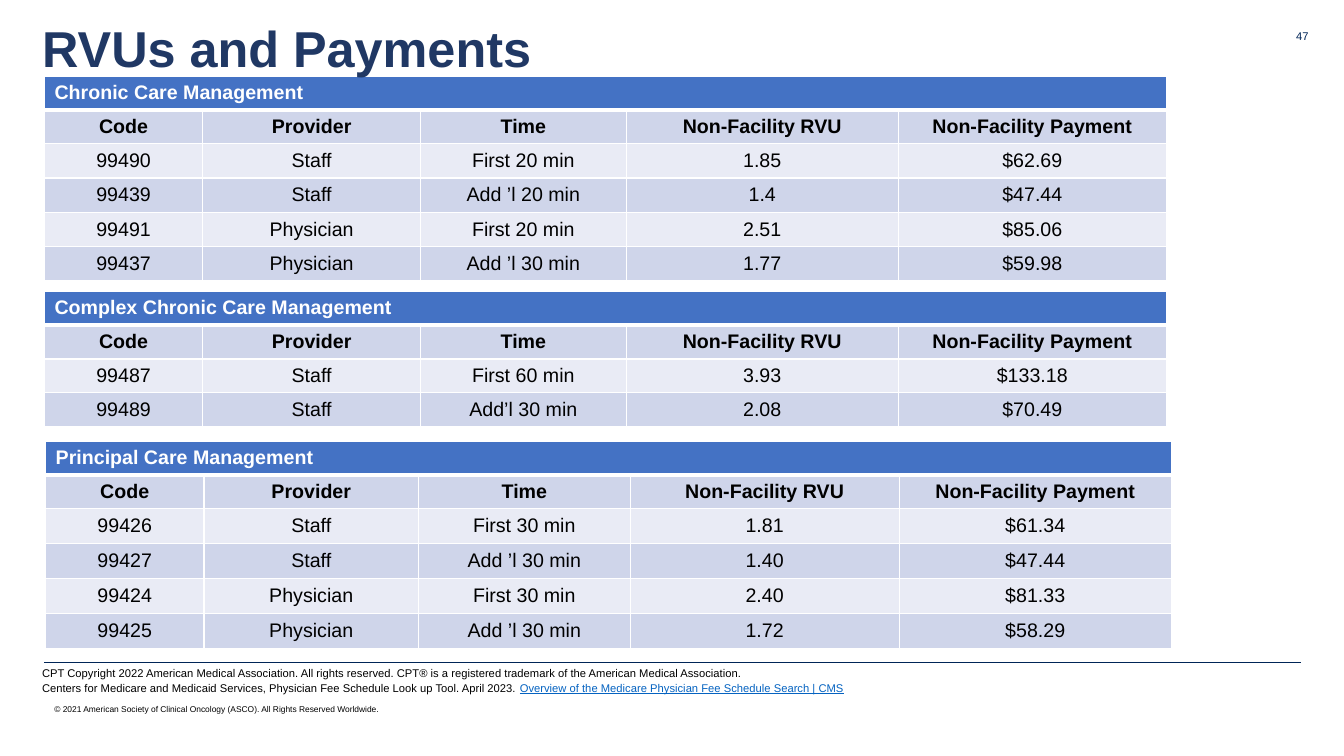
from lxml.etree import SubElement
from pptx import Presentation
from pptx.dml.color import RGBColor
from pptx.enum.shapes import MSO_CONNECTOR
from pptx.enum.text import MSO_ANCHOR, PP_ALIGN
from pptx.oxml.ns import qn
from pptx.util import Cm, Pt

COLORS = {
    "title": "203864",
    "navy": "002557",
    "black": "000000",
    "white": "FFFFFF",
    "link": "0563C1",
    "header": "4472C4",
    "dark band": "CFD5EA",
    "light band": "E9EBF5",
}
HEADINGS = ["Code", "Provider", "Time", "Non-Facility RVU", "Non-Facility Payment"]
HEADER_HEIGHT = 0.84

fee_tables = [
    {
        "name": "Chronic Care Management",
        "left": 1.12, "top": 1.93, "row_height": 0.86,
        "widths": [3.99, 5.49, 5.18, 6.86, 6.75],
        "rows": [
            ["99490", "Staff", "First 20 min", "1.85", "$62.69"],
            ["99439", "Staff", "Add ’l 20 min", "1.4", "$47.44"],
            ["99491", "Physician", "First 20 min", "2.51", "$85.06"],
            ["99437", "Physician", "Add ’l 30 min", "1.77", "$59.98"],
        ],
    },
    {
        "name": "Complex Chronic Care Management",
        "left": 1.12, "top": 7.35, "row_height": 0.85,
        "widths": [3.99, 5.49, 5.18, 6.86, 6.75],
        "rows": [
            ["99487", "Staff", "First 60 min", "3.93", "$133.18"],
            ["99489", "Staff", "Add’l 30 min", "2.08", "$70.49"],
        ],
    },
    {
        "name": "Principal Care Management",
        "left": 1.15, "top": 11.12, "row_height": 0.88,
        "widths": [3.99, 5.41, 5.33, 6.78, 6.86],
        "rows": [
            ["99426", "Staff", "First 30 min", "1.81", "$61.34"],
            ["99427", "Staff", "Add ’l 30 min", "1.40", "$47.44"],
            ["99424", "Physician", "First 30 min", "2.40", "$81.33"],
            ["99425", "Physician", "Add ’l 30 min", "1.72", "$58.29"],
        ],
    },
]

text_boxes = [
    ((1.12, 17.37, 11.43, 1.02), MSO_ANCHOR.MIDDLE, PP_ALIGN.LEFT, 6, [
        ("© 2021 American Society of Clinical Oncology (ASCO). All Rights Reserved Worldwide.", "black"),
    ]),
    ((30.84, 0.61, 2.39, 1.02), MSO_ANCHOR.TOP, PP_ALIGN.RIGHT, 8, [("47", "navy")]),
    ((0.81, 16.66, 22.96, 0.6), MSO_ANCHOR.TOP, PP_ALIGN.LEFT, 8, [
        ("CPT Copyright 2022 American Medical Association. All rights reserved. "
         "CPT® is a registered trademark of the American Medical Association.", "black"),
    ]),
    ((0.81, 17.04, 28.68, 0.6), MSO_ANCHOR.TOP, PP_ALIGN.LEFT, 8, [
        ("Centers for Medicare and Medicaid Services, Physician Fee Schedule Look up Tool. April 2023. ", "black"),
        ("Overview of the Medicare Physician Fee Schedule Search | CMS", "link"),
    ]),
]


def add_text(paragraph, text, size=14, color="black", bold=False, underline=False, alignment=PP_ALIGN.LEFT):
    paragraph.alignment = alignment
    run = paragraph.add_run()
    run.text = text
    run.font.name = "Arial"
    run.font.size = Pt(size)
    run.font.bold = bold
    run.font.underline = underline
    run.font.color.rgb = RGBColor.from_string(COLORS[color])


def format_cell(cell, fill, top_width=1, bottom_width=1):
    properties = cell._tc.get_or_add_tcPr()
    for side, width in (("L", 1), ("R", 1), ("T", top_width), ("B", bottom_width)):
        border = SubElement(properties, qn(f"a:ln{side}"), w=str(Pt(width)))
        border_fill = SubElement(border, qn("a:solidFill"))
        SubElement(border_fill, qn("a:srgbClr"), val=COLORS["white"])
    cell.fill.solid()
    cell.fill.fore_color.rgb = RGBColor.from_string(COLORS[fill])


presentation = Presentation()
presentation.slide_width = Cm(33.87)
presentation.slide_height = Cm(19.05)
slide = presentation.slides.add_slide(presentation.slide_layouts.get_by_name("Title Only"))

rule = slide.shapes.add_connector(MSO_CONNECTOR.STRAIGHT, Cm(1.12), Cm(16.69), Cm(32.79), Cm(16.69))
rule.line.color.rgb = RGBColor.from_string(COLORS["navy"])
rule.line.width = Pt(0.25)
SubElement(rule._element.spPr, qn("a:effectLst"))

for box, anchor, alignment, size, runs in text_boxes:
    shape = slide.shapes.add_textbox(*[Cm(length) for length in box])
    shape.text_frame.word_wrap = True
    shape.text_frame.vertical_anchor = anchor
    for text, color in runs:
        add_text(shape.text_frame.paragraphs[0], text, size=size, color=color,
                 underline=color == "link", alignment=alignment)

for fee_table in fee_tables:
    rows = [HEADINGS] + fee_table["rows"]
    heights = [HEADER_HEIGHT] * 2 + [fee_table["row_height"]] * len(fee_table["rows"])
    table = slide.shapes.add_table(
        len(heights), len(HEADINGS), Cm(fee_table["left"]), Cm(fee_table["top"]),
        Cm(sum(fee_table["widths"])), Cm(sum(heights))).table
    for column, width in zip(table.columns, fee_table["widths"]):
        column.width = Cm(width)
    for row, height in zip(table.rows, heights):
        row.height = Cm(height)

    for cell in table.rows[0].cells:
        format_cell(cell, "header", bottom_width=3)
    name_cell = table.cell(0, 0)
    name_cell.merge(table.cell(0, len(HEADINGS) - 1))
    add_text(name_cell.text_frame.paragraphs[0], fee_table["name"], color="white", bold=True)

    for row_index, values in enumerate(rows, start=1):
        is_heading = row_index == 1
        for column_index, value in enumerate(values):
            cell = table.cell(row_index, column_index)
            cell.vertical_anchor = MSO_ANCHOR.MIDDLE
            format_cell(cell, "dark band" if row_index % 2 else "light band",
                        top_width=3 if is_heading else 1)
            add_text(cell.text_frame.paragraphs[0], value, bold=is_heading, alignment=PP_ALIGN.CENTER)

title = slide.shapes.title
title.left, title.top, title.width, title.height = Cm(0.81), Cm(0.3), Cm(28.88), Cm(1.8)
title.text_frame.vertical_anchor = MSO_ANCHOR.TOP
add_text(title.text_frame.paragraphs[0], "RVUs and Payments", size=36, color="title", bold=True)
slide.shapes._spTree.append(title._element)

presentation.save("out.pptx")
